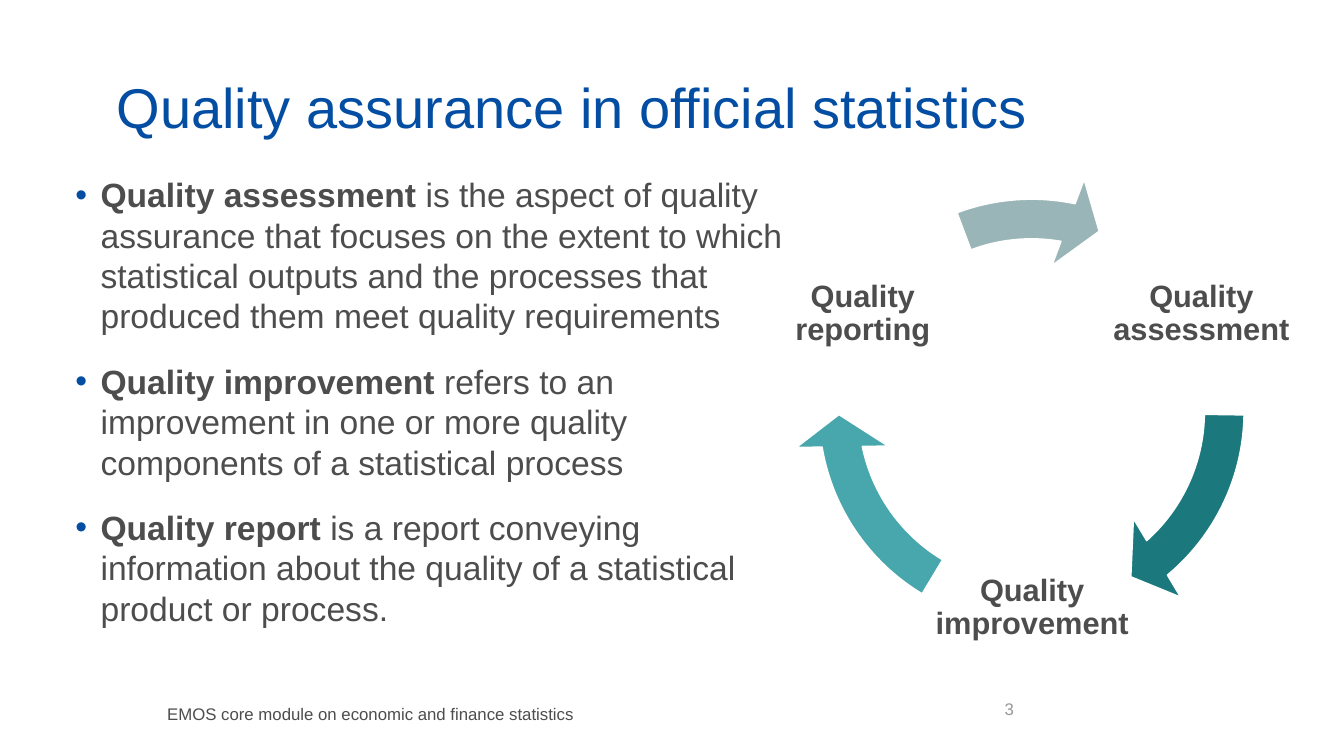
from lxml import etree
from pptx import Presentation
from pptx.dml.color import RGBColor
from pptx.enum.shapes import MSO_SHAPE
from pptx.enum.text import MSO_ANCHOR, PP_ALIGN
from pptx.oxml.ns import qn
from pptx.util import Pt

CIRCULAR_ARROW = MSO_SHAPE.CIRCULAR_ARROW
TOP, MIDDLE, BOTTOM = MSO_ANCHOR.TOP, MSO_ANCHOR.MIDDLE, MSO_ANCHOR.BOTTOM
LEFT, CENTER = PP_ALIGN.LEFT, PP_ALIGN.CENTER

COLORS = {
    "blue": "034EA2",
    "text": "4D4D4D",
    "number": "979797",
    "dark teal": "1B797E",
    "teal": "48A6AD",
    "pale teal": "99B5B8",
    "white": "FFFFFF",
}
FONT = "Arial"

TITLE = "Quality assurance in official statistics"
FOOTER = "EMOS core module on economic and finance statistics"
PAGE_NUMBER = "3"
DEFINITIONS = [
    ("Quality assessment ",
     "is the aspect of quality assurance that focuses on the extent to which "
     "statistical outputs and the processes that produced them meet quality requirements"),
    ("Quality improvement ",
     "refers to an improvement in one or more quality components of a statistical process"),
    ("Quality report ",
     "is a report conveying information about the quality of a statistical product or process."),
]
# label, label left, label top
CYCLE_LABELS = [
    ("Quality assessment", 786.2, 152.6),
    ("Quality improvement", 665.3, 362.2),
    ("Quality reporting", 544.3, 152.6),
]
# color, head angle, tail angle (python-pptx adjustment units)
CYCLE_ARROWS = [
    ("dark teal", 29.622, 0.528),
    ("teal", 101.707, 72.613),
    ("pale teal", 168.552, 149.683),
]
LABEL_SIZE = 144
RING = (566.6, 123.8, 340.6, 340.6)
BAND, HEAD_SWEEP, HEAD_WIDTH = 0.083, 5.765, 0.096
BULLET_INDENT = 18


def rgb(name):
    return RGBColor.from_string(COLORS[name])


def add_box(page, area, anchor=TOP, insets=(7.2, 3.6, 7.2, 3.6)):
    """Add a wrapping text box; insets run left, top, right, bottom."""
    frame = page.shapes.add_textbox(*map(Pt, area)).text_frame
    sides = ("margin_left", "margin_top", "margin_right", "margin_bottom")
    settings = dict(zip(sides, map(Pt, insets)), word_wrap=True, vertical_anchor=anchor)
    for name, value in settings.items():
        setattr(frame, name, value)
    return frame


def add_span(para, text, size, color="text", bold=False):
    span = para.add_run()
    span.text = text
    for name, value in {"name": FONT, "size": Pt(size), "bold": bold}.items():
        setattr(span.font, name, value)
    span.font.color.rgb = rgb(color)


def add_line(frame, text, size, color="text", bold=False, align=LEFT, spacing=None):
    """Fill the first paragraph of a text frame."""
    para = frame.paragraphs[0]
    para.alignment = align
    para.line_spacing = spacing
    add_span(para, text, size, color, bold)


def add_bullet(para):
    props = para._p.get_or_add_pPr()
    props.set("marL", str(Pt(BULLET_INDENT)))
    props.set("indent", str(-Pt(BULLET_INDENT)))
    color = etree.SubElement(props, qn("a:buClr"))
    etree.SubElement(color, qn("a:srgbClr"), val=COLORS["blue"])
    etree.SubElement(props, qn("a:buFont"), typeface=FONT)
    etree.SubElement(props, qn("a:buChar"), char="•")


def add_definitions(page):
    frame = add_box(page, (46.8, 121, 540, 306))
    for index, (term, meaning) in enumerate(DEFINITIONS):
        para = frame.add_paragraph() if index else frame.paragraphs[0]
        add_bullet(para)
        para.space_after = Pt(18)
        add_span(para, term, 24, bold=True)
        add_span(para, meaning, 24)


def add_cycle(page):
    for (label, left, top), (color, head, tail) in zip(CYCLE_LABELS, CYCLE_ARROWS):
        frame = add_box(page, (left, top, LABEL_SIZE, LABEL_SIZE), MIDDLE, (2.2,) * 4)
        add_line(frame, label, 22, bold=True, align=CENTER, spacing=0.9)
        arrow = page.shapes.add_shape(CIRCULAR_ARROW, *map(Pt, RING))
        for index, value in enumerate((BAND, HEAD_SWEEP, head, tail, HEAD_WIDTH)):
            arrow.adjustments[index] = value
        arrow.shadow.inherit = False
        arrow.fill.solid()
        arrow.fill.fore_color.rgb = rgb(color)
        arrow.line.color.rgb = rgb("white")
        arrow.line.width = Pt(1)


def main():
    deck = Presentation()
    deck.slide_width, deck.slide_height = Pt(960), Pt(540)
    page = deck.slides.add_slide(deck.slide_layouts[6])
    add_line(add_box(page, (112.3, 499, 437.8, 21.6)), FOOTER, 12)
    add_definitions(page)
    title = add_box(page, (76.3, 38.2, 828, 61.9), BOTTOM, (7.2, 3.6, 7.2, 0))
    add_line(title, TITLE, 40, "blue", spacing=0.9)
    add_line(add_box(page, (710.6, 491.8, 216, 28.8), MIDDLE), PAGE_NUMBER, 12, "number")
    add_cycle(page)
    deck.save("out.pptx")


if __name__ == "__main__":
    main()
